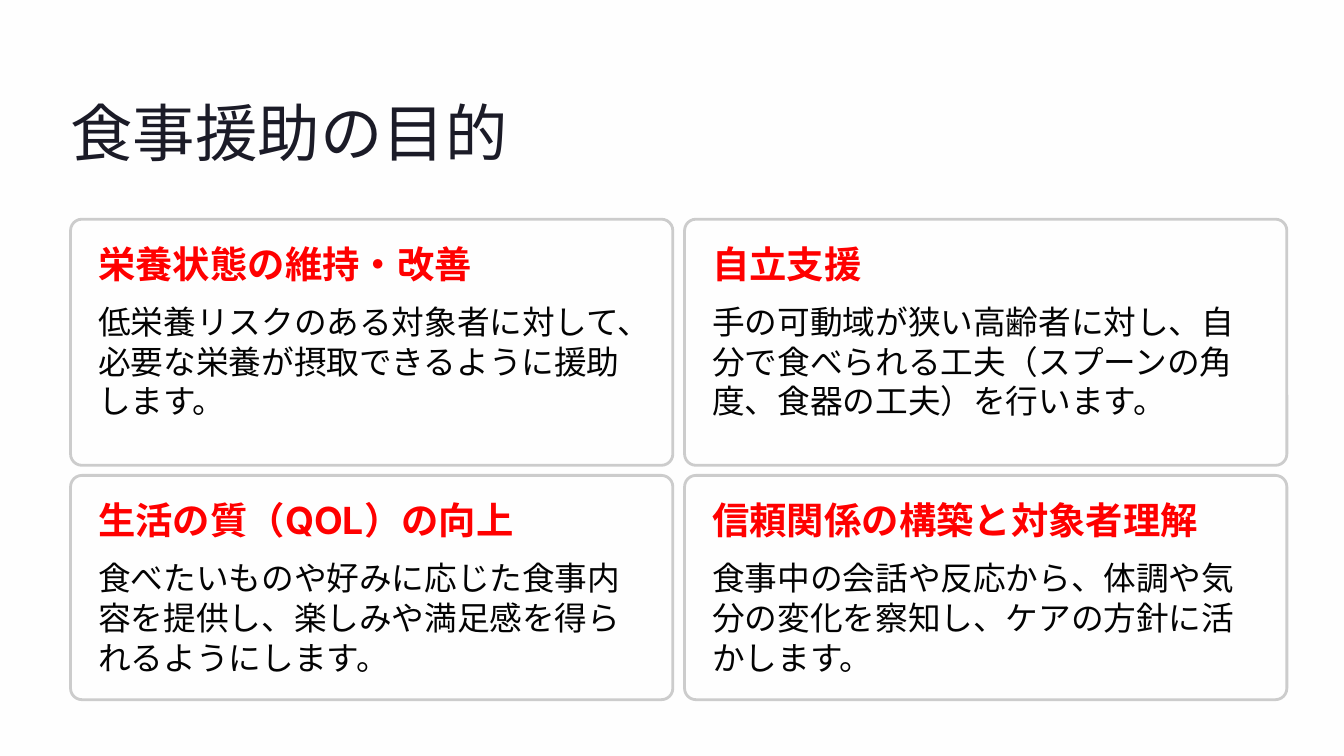
from lxml import etree
from pptx import Presentation
from pptx.dml.color import RGBColor
from pptx.enum.lang import MSO_LANGUAGE_ID
from pptx.enum.shapes import MSO_SHAPE
from pptx.enum.text import MSO_ANCHOR, PP_ALIGN
from pptx.oxml.ns import qn
from pptx.util import Pt

PX = 9144  # 100 px to the inch
ROUND = MSO_SHAPE.ROUNDED_RECTANGLE
TOP = MSO_ANCHOR.TOP
LEFT = PP_ALIGN.LEFT
JAPANESE = MSO_LANGUAGE_ID.JAPANESE

PAPER = RGBColor(0xFE, 0xFE, 0xFE)
WHITE = RGBColor(0xFF, 0xFF, 0xFF)
GREY = RGBColor(0xCC, 0xCC, 0xCC)
NAVY = RGBColor(0x1B, 0x1B, 0x27)
RED = RGBColor(0xFF, 0x00, 0x00)
BLACK = RGBColor(0x03, 0x03, 0x03)

TITLE = {"face": "Inter", "color": NAVY, "lead": 67,
         "font": {"size": Pt(53.5), "bold": False}}
HEAD = {"face": "Inter", "color": RED, "lead": 33.5,
        "font": {"size": Pt(32), "bold": True}}
BODY = {"face": "Lato", "color": BLACK, "lead": 34,
        "font": {"size": Pt(28), "bold": False}}

EDGE, WIDE, GAP = 84, 717, 14
PAD, INNER = 33, 635
CORNER = 13.5
ROWS = [(261, 293), (566, 267)]  # top and height
CARDS = [
    ("栄養状態の維持・改善",
     "低栄養リスクのある対象者に対して、必要な栄養が摂取できるように援助します。"),
    ("自立支援",
     "手の可動域が狭い高齢者に対し、自分で食べられる工夫（スプーンの角度、食器の工夫）を行います。"),
    ("生活の質（QOL）の向上",
     "食べたいものや好みに応じた食事内容を提供し、楽しみや満足感を得られるようにします。"),
    ("信頼関係の構築と対象者理解",
     "食事中の会話や反応から、体調や気分の変化を察知し、ケアの方針に活かします。"),
]


def scale(*box):
    return [n * PX for n in box]


def add_text(slide, box, words, style):
    frame = slide.shapes.add_textbox(*scale(*box)).text_frame
    margins = {f"margin_{side}": 0 for side in ("left", "top", "right", "bottom")}
    for name, value in {**margins, "word_wrap": True, "vertical_anchor": TOP}.items():
        setattr(frame, name, value)
    para = frame.paragraphs[0]
    para.alignment = LEFT
    para.line_spacing = Pt(style["lead"])
    run = para.add_run()
    run.text = words
    font = run.font
    for name, value in {**style["font"], "name": style["face"],
                        "language_id": JAPANESE}.items():
        setattr(font, name, value)
    font.color.rgb = style["color"]
    # East Asian glyphs take their face from a:ea
    east = etree.SubElement(run._r.get_or_add_rPr(), qn("a:ea"))
    east.set("typeface", style["face"])


def add_panel(slide, box):
    """Draw a rounded, nearly opaque white panel with a grey edge."""
    panel = slide.shapes.add_shape(ROUND, *scale(*box))
    panel.adjustments[0] = round(CORNER / min(box[2:]), 3)
    panel.shadow.inherit = False
    panel.fill.solid()
    panel.fill.fore_color.rgb = WHITE
    tint = panel.fill._xPr.find(".//" + qn("a:srgbClr"))
    etree.SubElement(tint, qn("a:alpha")).set("val", "95000")
    panel.line.color.rgb = GREY
    panel.line.width = Pt(2.4)


def add_card(slide, box, head, body):
    left, top = box[:2]
    add_panel(slide, box)
    add_text(slide, (left + PAD, top + PAD, INNER, 47), head, HEAD)
    add_text(slide, (left + PAD, top + 98, INNER, 144), body, BODY)


def main():
    deck = Presentation()
    deck.slide_width, deck.slide_height = scale(1600, 900)
    slide = deck.slides.add_slide(deck.slide_layouts[6])
    back = slide.background.fill
    back.solid()
    back.fore_color.rgb = PAPER

    add_text(slide, (EDGE, 108, 748, 93), "食事援助の目的", TITLE)
    for i, (head, body) in enumerate(CARDS):
        row, col = divmod(i, 2)
        top, tall = ROWS[row]
        left = EDGE + col * (WIDE + GAP)
        add_card(slide, (left, top, WIDE, tall), head, body)
    deck.save("out.pptx")


if __name__ == "__main__":
    main()
